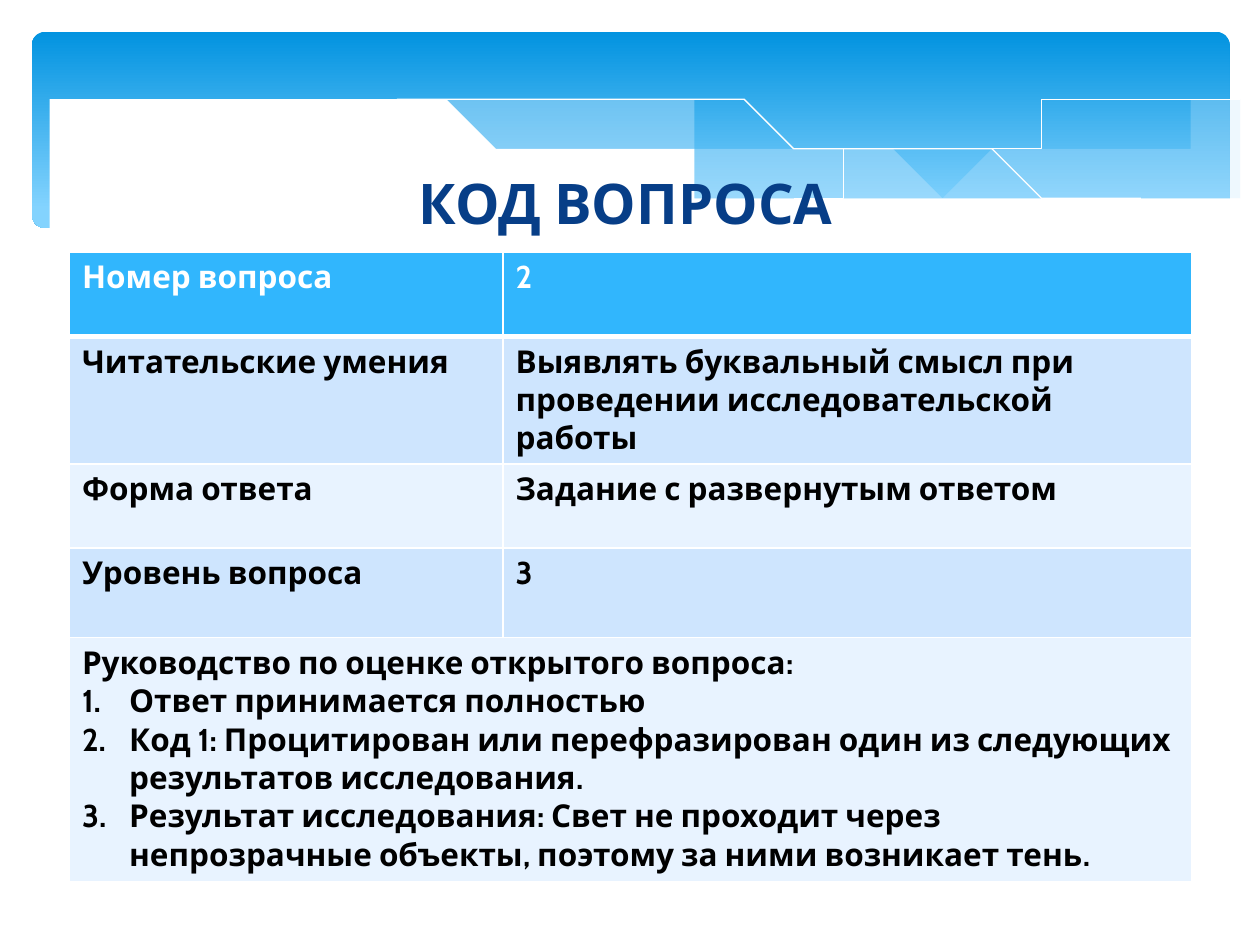
"""Build the slide with the code table for question 2."""
from lxml.etree import SubElement
from pptx import Presentation
from pptx.dml.color import RGBColor as Rgb
from pptx.enum.shapes import MSO_SHAPE as Kind
from pptx.enum.text import MSO_ANCHOR as Anchor, PP_ALIGN as Align
from pptx.oxml.ns import qn
from pptx.util import Cm, Pt

HUES = {
    "sky": "0293E0", "pale": "83D3FE", "mist": "C6E7FC", "white": "FFFFFF",
    "navy": "073E87", "black": "000000", "head": "31B6FD",
    "odd": "CEE5FE", "even": "E8F3FF",
}
HUES = {name: Rgb.from_string(code) for name, code in HUES.items()}


def write(frame, lines, size=18, hue="black", align=Align.LEFT, listed=False):
    frame.word_wrap = True
    for i, line in enumerate(lines):
        para = frame.paragraphs[0] if i == 0 else frame.add_paragraph()
        para.alignment = align
        run = para.add_run()
        run.text = line
        font = run.font
        font.name, font.size, font.bold = "Cabin", Pt(size), True
        font.color.rgb = HUES[hue]
        if listed and i:
            props = para._p.get_or_add_pPr()
            props.set("marL", str(Cm(0.95)))
            props.set("indent", str(-Cm(0.95)))
            SubElement(props, qn("a:buFont"), typeface="Cabin")
            SubElement(props, qn("a:buAutoNum"), type="arabicPeriod")


def curve(knots, steps=6):
    ends = [knots[0], *knots, knots[-1]]
    dots = [knots[0]]
    for a, b, c, d in zip(ends, ends[1:], ends[2:], ends[3:]):
        for t in (k / steps for k in range(1, steps + 1)):
            dots.append(tuple(
                (2 * q + (r - p) * t + (2 * p - 5 * q + 4 * r - s) * t ** 2
                 + (3 * q - p - 3 * r + s) * t ** 3) / 2
                for p, q, r, s in zip(a, b, c, d)))
    return dots


deck = Presentation()
deck.slide_width, deck.slide_height = Cm(25.4), Cm(19.05)
slide = deck.slides.add_slide(deck.slide_layouts[6])
shapes = slide.shapes

band = shapes.add_shape(Kind.ROUNDED_RECTANGLE, Cm(0.64), Cm(0.64), Cm(24.15), Cm(3.96))
band.adjustments[0] = 0.07
band.shadow.inherit = False
band.line.fill.background()
band.fill.gradient()
band.fill.gradient_angle = 270
for stop, hue, place in zip(band.fill.gradient_stops, ("sky", "pale"), (0, 0.9)):
    stop.color.rgb, stop.position = HUES[hue], place

right = curve([(24.82, 2.39), (23.42, 2.64), (21.89, 3), (19.81, 3.48),
               (17.96, 3.86), (16.81, 4.06)])
right += curve([(16.81, 4.06), (18.62, 4.29), (20.7, 4.37), (22.61, 4.22),
                (23.98, 3.91), (24.82, 3.61)])
middle = curve([(22.71, 4.24), (20.52, 3.91), (17.96, 3.4), (16, 2.95), (14.1, 2.54),
                (12.42, 2.26), (10.67, 2.08), (9.19, 2.03), (7.29, 2.18)])
middle += curve([(7.29, 2.18), (9.22, 2.46), (11.43, 2.95), (14.4, 3.63), (16.54, 4.01),
                 (18.36, 4.27), (20.24, 4.39), (21.56, 4.37), (22.71, 4.24)])
fall = curve([(7.87, 2.29), (8.74, 2.13), (10.59, 2.06), (12.42, 2.13),
              (14.78, 2.39), (17.68, 2.9), (20.22, 3.45), (23.06, 4.22)])
rise = curve([(15.6, 3.84), (17.68, 3.3), (19.74, 2.82), (22.02, 2.36),
              (23.5, 2.13), (24.79, 2.03)])
front = curve([(24.82, 3.58), (23.37, 4.04), (21.59, 4.32), (19.76, 4.32), (17.48, 4.11),
               (14.71, 3.66), (11.35, 2.9), (8.64, 2.34), (6.35, 2.06), (4.5, 1.98),
               (2.69, 2.11), (1.32, 2.44), (0.58, 2.72)])
front += [(0.58, 5.69), (24.82, 5.69)]

for dots, hue, alpha in (
    (right, "mist", 29), (middle, "mist", 40),
    (fall, None, 0), (rise, None, 0), (front, "white", 100),
):
    pen = shapes.build_freeform(*dots[0], scale=Cm(1))
    pen.add_line_segments(dots[1:], close=hue is not None)
    wave = pen.convert_to_shape()
    wave.shadow.inherit = False
    if hue:
        wave.fill.solid()
        wave.fill.fore_color.rgb = HUES[hue]
        wave.line.fill.background()
        tint = wave._element.spPr.find(qn("a:solidFill"))[0]
        SubElement(tint, qn("a:alpha"), val=str(alpha * 1000))
    else:
        wave.fill.background()
        wave.line.color.rgb = HUES["white"]
        wave.line.width = Cm(0)

title = shapes.add_textbox(Cm(1.4), Cm(1.4), Cm(22.43), Cm(3.48)).text_frame
title.vertical_anchor = Anchor.BOTTOM
write(title, ["КОД ВОПРОСА"], size=32, hue="navy", align=Align.CENTER)

rows = [
    ("Номер вопроса", "2"),
    ("Читательские умения", "Выявлять буквальный смысл при проведении исследовательской работы"),
    ("Форма ответа", "Задание с развернутым ответом"),
    ("Уровень вопроса", "3"),
]
guide = [
    "Руководство по оценке открытого вопроса:",
    "Ответ принимается полностью",
    "Код 1: Процитирован или перефразирован один из следующих результатов исследования.",
    "Результат исследования: Свет не проходит через непрозрачные объекты, "
    "поэтому за ними возникает тень.",
]
highs = (1.7, 2.57, 1.7, 1.8, 4.93)
grid = shapes.add_table(5, 2, Cm(1.4), Cm(5.08), Cm(22.63), Cm(sum(highs))).table
for col, wide in zip(grid.columns, (8.74, 13.89)):
    col.width = Cm(wide)
for i, (row, high) in enumerate(zip(grid.rows, highs)):
    row.height = Cm(high)
    for cell in row.cells:
        props = cell._tc.get_or_add_tcPr()
        for side in "LRTB":
            thick = 3 if (i, side) in ((0, "B"), (1, "T")) else 1
            edge = SubElement(props, qn(f"a:ln{side}"), w=str(Pt(thick)))
            paint = SubElement(edge, qn("a:solidFill"))
            SubElement(paint, qn("a:srgbClr"), val=str(HUES["white"]))
        cell.fill.solid()
        cell.fill.fore_color.rgb = HUES["head" if i == 0 else "odd" if i % 2 else "even"]
for i, words in enumerate(rows):
    for j, word in enumerate(words):
        write(grid.cell(i, j).text_frame, [word], hue="black" if i else "white")
last = grid.cell(4, 0)
last.merge(grid.cell(4, 1))
write(last.text_frame, guide, listed=True)

deck.save("out.pptx")
